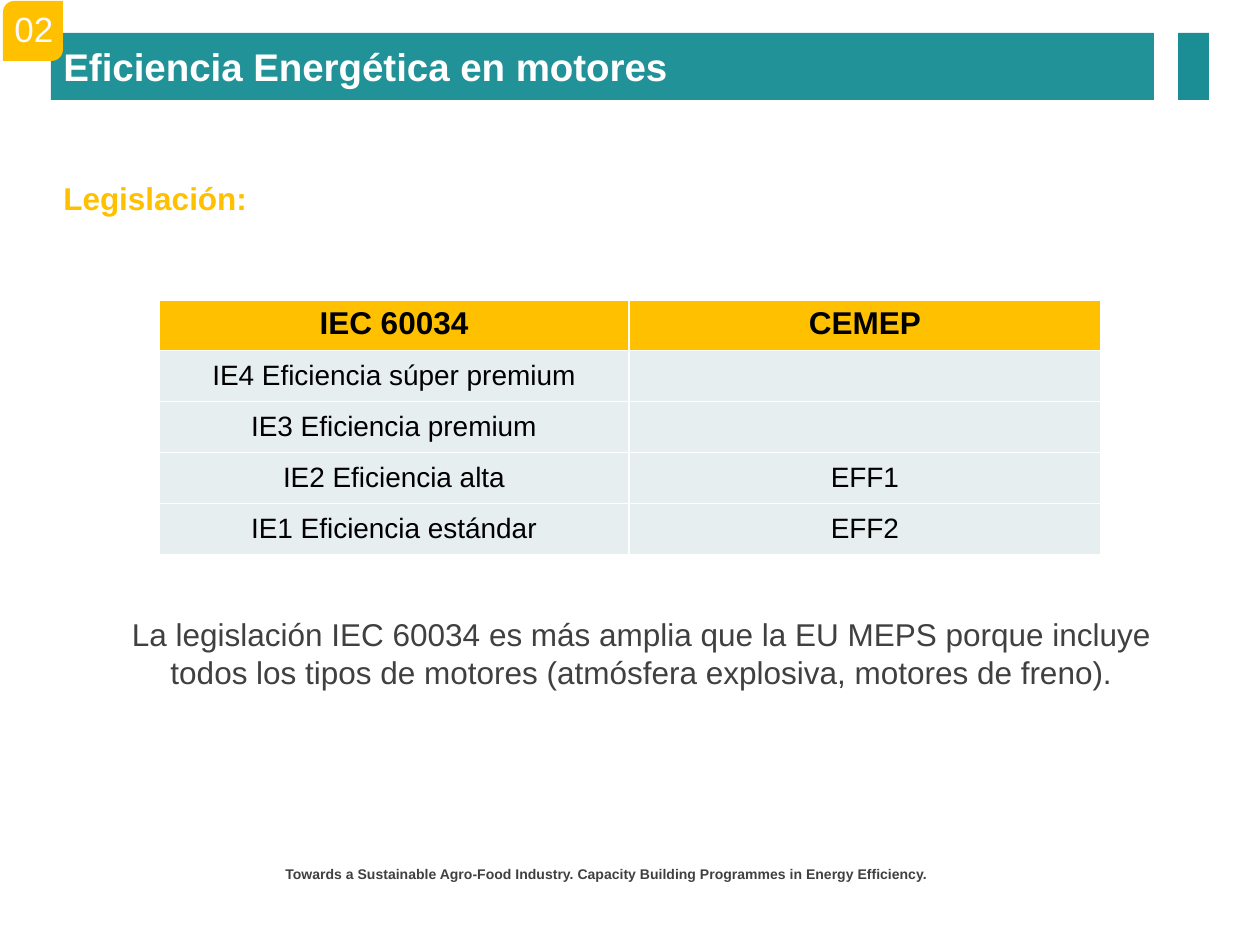
import pptx
import pptx.util
import pptx.dml.color
import pptx.enum.shapes
import pptx.enum.text
import pptx.oxml
import pptx.oxml.ns

RGBColor = pptx.dml.color.RGBColor
SHAPE = pptx.enum.shapes.MSO_SHAPE
ALIGN = pptx.enum.text.PP_ALIGN
ANCHOR = pptx.enum.text.MSO_ANCHOR

PX = 914400 / 126  # EMU per px

TEAL = RGBColor(0x20, 0x92, 0x98)
DARK_TEAL = RGBColor(0x1B, 0x8E, 0x95)
AMBER = RGBColor(0xFF, 0xC0, 0x00)
PALE = RGBColor(0xE7, 0xEE, 0xEF)
GRAY = RGBColor(0x40, 0x40, 0x40)
BLACK = RGBColor(0x00, 0x00, 0x00)
WHITE = RGBColor(0xFF, 0xFF, 0xFF)
OFF_WHITE = RGBColor(0xFA, 0xFA, 0xFA)

ROWS = [
    ("IEC 60034", "CEMEP"),
    ("IE4 Eficiencia súper premium", ""),
    ("IE3 Eficiencia premium", ""),
    ("IE2 Eficiencia alta", "EFF1"),
    ("IE1 Eficiencia estándar", "EFF2"),
]


def px(n):
    return pptx.util.Emu(round(n * PX))


def set_text(tf, text, size, color, bold=False, align=ALIGN.LEFT):
    p = tf.paragraphs[0]
    p.text = text
    p.alignment = align
    p.font.name = "Arial"
    p.font.size = pptx.util.Pt(size)
    p.font.bold = bold
    p.font.color.rgb = color
    return p


def add_text(slide, box, text, size, color, bold=False, align=ALIGN.LEFT, wrap=True):
    tf = slide.shapes.add_textbox(*map(px, box)).text_frame
    tf.word_wrap = wrap
    return set_text(tf, text, size, color, bold, align)


def add_block(slide, kind, box, color):
    sp = slide.shapes.add_shape(kind, *map(px, box))
    sp.shadow.inherit = False
    sp.fill.solid()
    sp.fill.fore_color.rgb = color
    sp.line.fill.background()
    return sp


def set_borders(cell, color, width):
    tcPr = cell._tc.get_or_add_tcPr()
    for i, side in enumerate(("lnL", "lnR", "lnT", "lnB")):
        ln = pptx.oxml.parse_xml(
            f'<a:{side} {pptx.oxml.ns.nsdecls("a")} w="{pptx.util.Pt(width)}">'
            f'<a:solidFill><a:srgbClr val="{color}"/></a:solidFill></a:{side}>')
        tcPr.insert(i, ln)


def add_table(slide, left, top, widths, heights, rows):
    box = (left, top, sum(widths), sum(heights))
    table = slide.shapes.add_table(len(rows), len(widths), *map(px, box)).table
    for column, width in zip(table.columns, widths):
        column.width = px(width)
    for i, (height, texts) in enumerate(zip(heights, rows)):
        table.rows[i].height = px(height)
        header = i == 0
        for j, text in enumerate(texts):
            cell = table.cell(i, j)
            cell.fill.solid()
            cell.fill.fore_color.rgb = AMBER if header else PALE
            cell.vertical_anchor = ANCHOR.TOP if header else ANCHOR.MIDDLE
            set_text(cell.text_frame, text, 18 if header else 16, BLACK,
                     header, ALIGN.CENTER)
            set_borders(cell, WHITE, 1)


def main():
    prs = pptx.Presentation()
    prs.slide_width, prs.slide_height = px(1260), px(945)
    slide = prs.slides.add_slide(prs.slide_layouts[6])

    # Footer
    add_text(slide, (273, 859, 693, 26),
             "Towards a Sustainable Agro-Food Industry. "
             "Capacity Building Programmes in Energy Efficiency.", 8, GRAY, True)

    # Section heading and closing remark
    p = add_text(slide, (51, 154, 1183, 63), "Legislación:", 18, AMBER, True,
                 ALIGN.JUSTIFY)
    p.line_spacing = 1.5
    add_text(slide, (113, 609, 1057, 89),
             "La legislación IEC 60034 es más amplia que la EU MEPS porque incluye "
             "todos los tipos de motores (atmósfera explosiva, motores de freno).",
             18, GRAY, align=ALIGN.CENTER)

    # Title bar
    bar = add_block(slide, SHAPE.RECTANGLE, (51, 33, 1103, 67), TEAL)
    bar.text_frame.vertical_anchor = ANCHOR.MIDDLE
    set_text(bar.text_frame, "Eficiencia Energética en motores", 22, WHITE, True)
    add_block(slide, SHAPE.RECTANGLE, (1178, 33, 31, 67), DARK_TEAL)

    # Section number
    badge = add_block(slide, SHAPE.ROUND_2_DIAG_RECTANGLE, (3, 1, 60, 60), AMBER)
    badge.adjustments[0] = 0.19
    add_text(slide, (2, 1, 64, 55), "02", 20, OFF_WHITE, align=ALIGN.CENTER, wrap=False)

    # Efficiency classes
    add_table(slide, 159, 300, (470, 472), (50, 51, 51, 51, 51), ROWS)

    prs.save("out.pptx")


if __name__ == "__main__":
    main()
